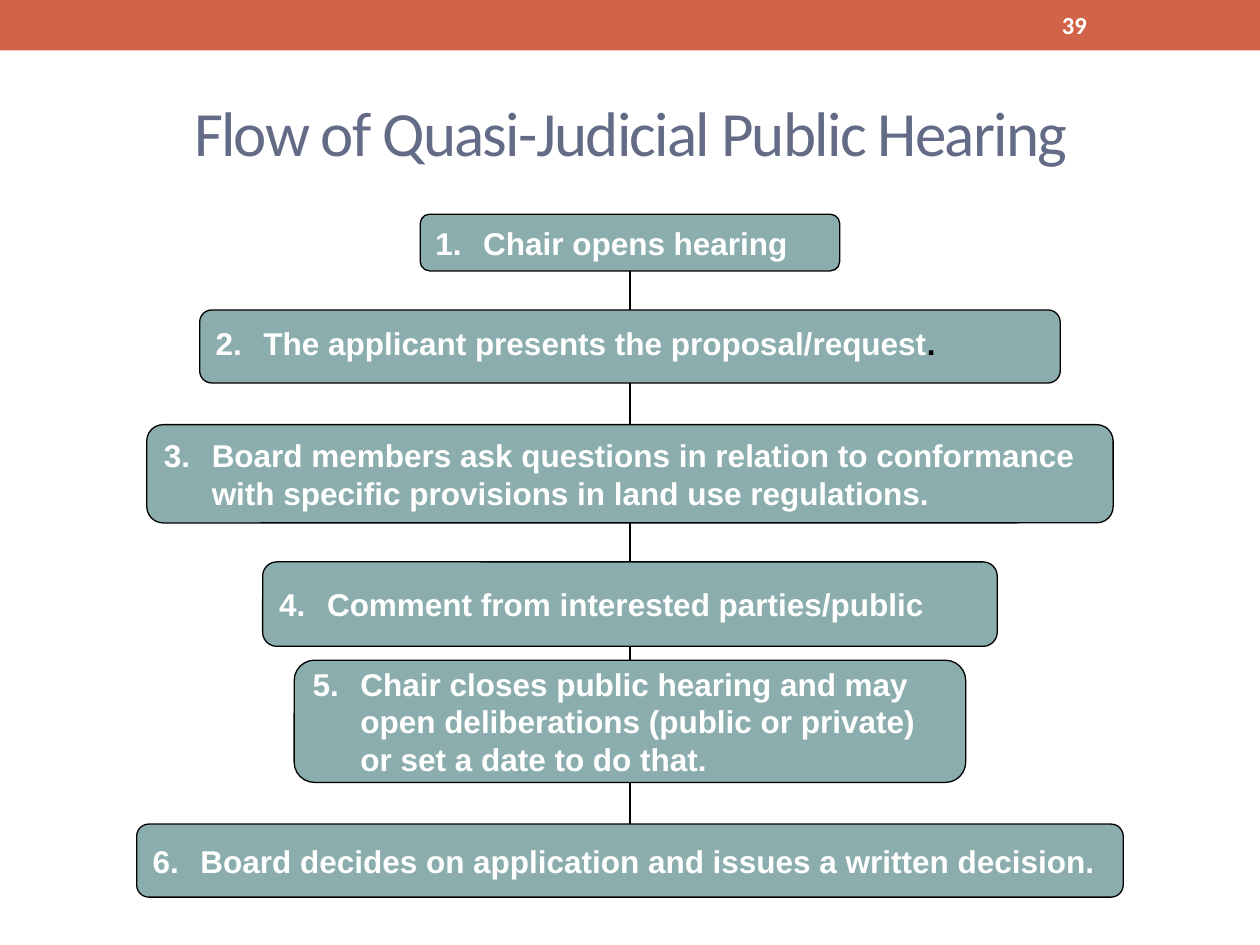
"""Build a slide showing the flow of a quasi-judicial public hearing."""
import pptx
import pptx.util
import pptx.dml.color
import pptx.enum.shapes
import pptx.enum.text
import pptx.oxml.ns
from lxml import etree

Inches, Pt = pptx.util.Inches, pptx.util.Pt
RGBColor = pptx.dml.color.RGBColor
SHAPE = pptx.enum.shapes.MSO_SHAPE
ALIGN = pptx.enum.text.PP_ALIGN
qn = pptx.oxml.ns.qn

ORANGE = RGBColor(0xD1, 0x63, 0x49)
SLATE = RGBColor(0x64, 0x6B, 0x86)
TEAL = RGBColor(0x8C, 0xAD, 0xAE)
WHITE = RGBColor(0xFF, 0xFF, 0xFF)
BLACK = RGBColor(0, 0, 0)

TITLE = "Flow of Quasi-Judicial Public Hearing"
PAGE = "39"
CENTER = 5
INDENT = 0.38
STEPS = [
    # top, width, height, line spacing, runs
    (1.7, 3.33, 0.45, 1, [("Chair opens hearing", WHITE)]),
    (2.46, 6.83, 0.58, 0.8,
     [("The applicant presents the proposal/request", WHITE), (".", BLACK)]),
    (3.37, 7.67, 0.78, 1,
     [("Board members ask questions in relation to conformance "
       "with specific provisions in land use regulations.", WHITE)]),
    (4.46, 5.83, 0.67, 1, [("Comment from interested parties/public", WHITE)]),
    (5.24, 5.33, 0.97, 1,
     [("Chair closes public hearing and may open deliberations "
       "(public or private) or set a date to do that.", WHITE)]),
    (6.54, 7.83, 0.58, 1,
     [("Board decides on application and issues a written decision.", WHITE)]),
]


def set_font(font, name, size, color, bold=False):
    font.name, font.size, font.bold = name, Pt(size), bold
    font.color.rgb = color


def add_label(s, box, text, size, color, bold, align):
    tf = s.shapes.add_textbox(*map(Inches, box)).text_frame
    tf.word_wrap = True
    tf.vertical_anchor = pptx.enum.text.MSO_ANCHOR.MIDDLE
    p = tf.paragraphs[0]
    p.text, p.alignment = text, align
    set_font(p.font, "Calibri", size, color, bold)
    return p


def number_paragraph(p, number):
    pPr = p._p.get_or_add_pPr()
    pPr.set("marL", str(Inches(INDENT)))
    pPr.set("indent", str(-Inches(INDENT)))
    bullet = etree.Element(qn("a:buAutoNum"), type="arabicPeriod", startAt=str(number))
    spacing = pPr.find(qn("a:lnSpc"))
    pPr.insert(0 if spacing is None else 1, bullet)


def add_step(s, number, top, width, height, spacing, runs):
    box = (CENTER - width / 2, top, width, height)
    sp = s.shapes.add_shape(SHAPE.FLOWCHART_ALTERNATE_PROCESS, *map(Inches, box))
    sp.shadow.inherit = False
    sp.fill.solid()
    sp.fill.fore_color.rgb = TEAL
    sp.line.color.rgb = BLACK
    sp.line.width = Pt(0.75)
    tf = sp.text_frame
    tf.word_wrap = True
    tf.vertical_anchor = pptx.enum.text.MSO_ANCHOR.MIDDLE
    p = tf.paragraphs[0]
    p.alignment = ALIGN.LEFT
    p.line_spacing = spacing
    set_font(p.font, "Arial", 18, WHITE, True)
    for text, color in runs:
        r = p.add_run()
        r.text = text
        set_font(r.font, "Arial", 18, color, True)
    number_paragraph(p, number)


def add_link(s, start, end):
    points = map(Inches, (CENTER, start, CENTER, end))
    line = s.shapes.add_connector(pptx.enum.shapes.MSO_CONNECTOR.STRAIGHT, *points)
    line.line.color.rgb = BLACK
    line.line.width = Pt(0.75)
    etree.SubElement(line._element.spPr, qn("a:effectLst"))


def main():
    prs = pptx.Presentation()
    prs.slide_width, prs.slide_height = Inches(10), Inches(7.5)
    s = prs.slides.add_slide(prs.slide_layouts[6])

    band = s.shapes.add_shape(SHAPE.RECTANGLE, 0, 0, prs.slide_width, Inches(0.4))
    band.shadow.inherit = False
    band.fill.solid()
    band.fill.fore_color.rgb = ORANGE
    band.line.fill.background()

    p = add_label(s, (0.42, 0.58, 9.17, 0.92), TITLE, 36, SLATE, False, ALIGN.CENTER)
    p.runs[0].font._element.set("spc", "-100")
    add_label(s, (8.33, 0.02, 1.17, 0.36), PAGE, 14, WHITE, True, ALIGN.LEFT)

    for number, step in enumerate(STEPS, 1):
        add_step(s, number, *step)
    for upper, lower in zip(STEPS, STEPS[1:]):
        add_link(s, upper[0] + upper[2], lower[0])

    prs.save("out.pptx")


if __name__ == "__main__":
    main()
